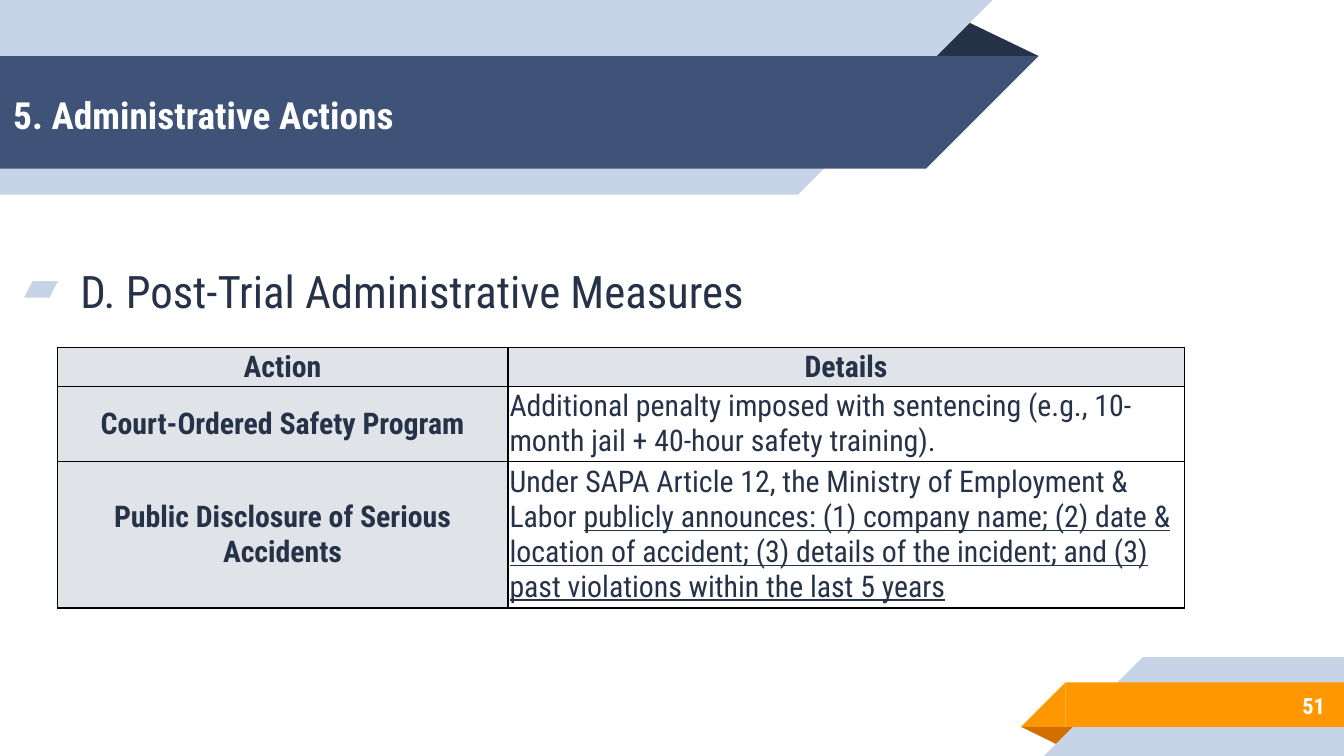
from lxml.etree import SubElement
from pptx import Presentation
from pptx.dml.color import RGBColor
from pptx.enum.shapes import MSO_SHAPE
from pptx.enum.text import MSO_ANCHOR, PP_ALIGN
from pptx.oxml.ns import qn
from pptx.util import Cm, Pt

COLORS = {
    "pale": "C7D3E6", "navy": "3F5378", "ink": "263248", "orange": "FF9800",
    "rust": "D26F00", "label": "E0E4E9", "white": "FFFFFF", "border": "000000",
}
FONT = "Roboto Condensed"
ROWS = [
    ("Action", ["Details"]),
    ("Court-Ordered Safety Program",
     ["Additional penalty imposed with sentencing (e.g., 10-month jail + 40-hour safety training)."]),
    ("Public Disclosure of Serious Accidents",
     ["Under SAPA Article 12, the Ministry of Employment & Labor ",
      "publicly announces: (1) company name; (2) date & location of accident; "
      "(3) details of the incident; and (3) past violations within the last 5 years"]),
]


def color(name):
    """Return the named colour."""
    return RGBColor.from_string(COLORS[name])


def add_piece(page, kind, box, fill, rotation=0, flip=False):
    """Add a plain filled shape in the box, given in centimetres."""
    shape = page.shapes.add_shape(kind, *map(Cm, box))
    shape.shadow.inherit = False
    shape.fill.solid()
    shape.fill.fore_color.rgb = color(fill)
    shape.line.fill.background()
    shape.rotation = rotation
    if flip:
        shape._element.spPr.find(qn("a:xfrm")).set("flipH", "1")
    return shape


def add_fold(page, box, fill, rotation=0):
    """Add the shaded triangle behind a ribbon."""
    fold = add_piece(page, MSO_SHAPE.ISOSCELES_TRIANGLE, box, fill, rotation)
    fold.adjustments[0] = 0.324


def add_band(page, box, fill, slant_right):
    """Add a bar whose right or left end is cut at 45 degrees."""
    left, top, width, height = box
    bar_left = left if slant_right else left + height
    tip_left = left + width - height if slant_right else left
    add_piece(page, MSO_SHAPE.RECTANGLE, (bar_left, top, width - height, height), fill)
    add_piece(page, MSO_SHAPE.RIGHT_TRIANGLE, (tip_left, top, height, height), fill,
              180 if slant_right else 0, True)


def style_paragraph(para, size, fill, bold=False, align=PP_ALIGN.LEFT):
    """Set font and alignment of a paragraph."""
    para.alignment = align
    para.font.name = FONT
    para.font.size = Pt(size)
    para.font.bold = bold
    para.font.color.rgb = color(fill)


def add_text(page, box, text, size, fill, **style):
    """Add a vertically centred line of text and return its paragraph."""
    frame = page.shapes.add_textbox(*map(Cm, box)).text_frame
    frame.word_wrap = True
    frame.vertical_anchor = MSO_ANCHOR.MIDDLE
    frame.margin_left = frame.margin_right = Cm(0.25)
    frame.margin_top = frame.margin_bottom = Cm(0.25)
    para = frame.paragraphs[0]
    para.add_run().text = text
    style_paragraph(para, size, fill, **style)
    return para


def add_header(page, box):
    """Add the title ribbon."""
    left, top, width, height = box
    add_fold(page, (left + 17.48, top + 0.36, 2.15, 0.7), "ink")
    add_band(page, (left, top, width - 0.87, height), "pale", True)
    add_band(page, (left, top + 1.06, width, 2.13), "navy", True)
    add_text(page, (left, top + 1.1, 18.5, 2.13), "5. Administrative Actions", 20, "white", bold=True)


def add_footer(page, box):
    """Add the page number ribbon."""
    left, top, width, height = box
    add_fold(page, (left, top + 1.32, 1.09, 0.36), "rust", 180)
    add_band(page, (left + 0.43, top, width - 0.43, height), "pale", False)
    add_band(page, (left, top + 0.48, width, 0.84), "orange", False)
    add_text(page, (left + 1.85, top + 0.46, 4.14, 0.9), "51", 12, "white",
             bold=True, align=PP_ALIGN.RIGHT)


def add_heading(page, box):
    """Add the bulleted section heading."""
    para = add_text(page, box, "D. Post-Trial Administrative Measures", 24, "ink")
    para.space_before = Pt(6)
    properties = para._p.get_or_add_pPr()
    properties.set("marL", str(Cm(1.27)))
    properties.set("indent", str(Cm(-1.07)))
    bullet_color = properties.makeelement(qn("a:buClr"))
    SubElement(bullet_color, qn("a:srgbClr"), val=COLORS["pale"])
    bullet = properties.makeelement(qn("a:buChar"), {"char": "▰"})
    default_font = properties.find(qn("a:defRPr"))
    default_font.addprevious(bullet_color)
    default_font.addprevious(bullet)


def add_borders(cell):
    """Draw a thin line on each side of a cell."""
    properties = cell._tc.get_or_add_tcPr()
    for side in ("lnL", "lnR", "lnT", "lnB"):
        line = SubElement(properties, qn(f"a:{side}"), w=str(Pt(0.75)))
        fill = SubElement(line, qn("a:solidFill"))
        SubElement(fill, qn("a:srgbClr"), val=COLORS["border"])


def fill_cell(cell, spans, is_label, is_centered):
    """Write and style one cell, underlining every span after the first."""
    add_borders(cell)
    if is_label:
        cell.fill.solid()
        cell.fill.fore_color.rgb = color("label")
    else:
        cell.fill.background()
    cell.vertical_anchor = MSO_ANCHOR.MIDDLE
    cell.margin_left = cell.margin_right = Cm(0.03)
    cell.margin_top = cell.margin_bottom = Cm(0.03)
    para = cell.text_frame.paragraphs[0]
    for index, text in enumerate(spans):
        span = para.add_run()
        span.text = text
        if index:
            span.font.underline = True
    para.space_after = Pt(8)
    style_paragraph(para, 16, "ink", is_label, PP_ALIGN.CENTER if is_centered else PP_ALIGN.LEFT)


def add_measures(page, box):
    """Add the table of measures."""
    table = page.shapes.add_table(len(ROWS), 2, *map(Cm, box)).table
    table.first_row = table.horz_banding = False
    for column, share in zip(table.columns, (0.4, 0.6)):
        column.width = Cm(box[2] * share)
    for row, height in zip(table.rows, (0.72, 1.36, 2.68)):
        row.height = Cm(height)
    for index, (action, details) in enumerate(ROWS):
        is_head = index == 0
        fill_cell(table.cell(index, 0), [action], True, True)
        fill_cell(table.cell(index, 1), details, is_head, is_head)


def main():
    """Build and save the deck."""
    deck = Presentation()
    deck.slide_width, deck.slide_height = Cm(25.4), Cm(14.29)
    page = deck.slides.add_slide(deck.slide_layouts[6])
    add_footer(page, (19.3, 12.42, 6.1, 1.87))
    add_header(page, (0, 0, 19.63, 3.68))
    add_heading(page, (0, 0.03, 25.4, 10.92))
    add_measures(page, (1.08, 6.57, 21.3, 4.76))
    deck.save("out.pptx")


if __name__ == "__main__":
    main()
